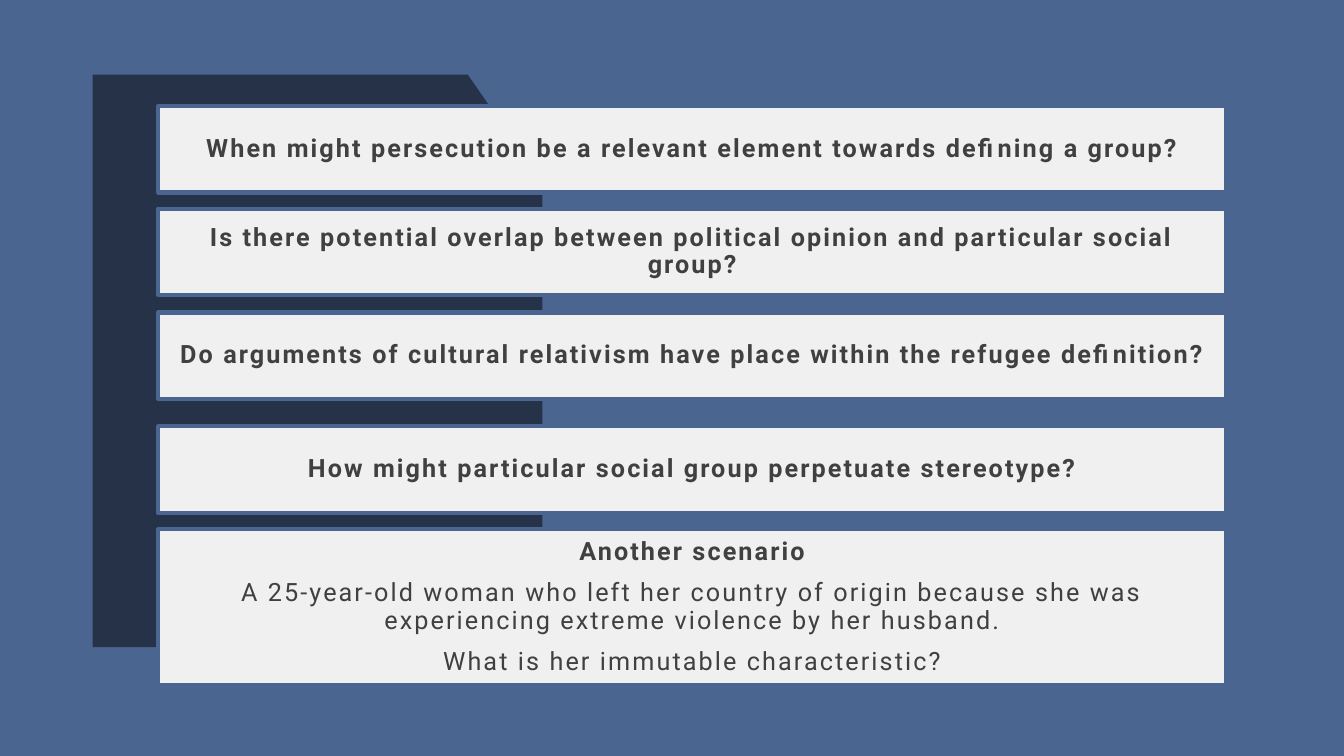
from pptx import Presentation
from pptx import util as u
from pptx.dml.color import RGBColor
from pptx.enum import shapes, text

BLUE, NAVY, PALE, GREY = "4A6590", "253248", "F1F0F0", "404040"

# Top, height and paragraphs of each card; the first paragraph is bold
CARDS = [
    (1.05, 0.86, ["When might persecution be a relevant element towards defining a group?"]),
    (2.07, 0.86, ["Is there potential overlap between political opinion and particular social group?"]),
    (3.10, 0.86, ["Do arguments of cultural relativism have place within the refugee definition?"]),
    (4.23, 0.86, ["How might particular social group perpetuate stereotype?"]),
    (5.25, 1.55, [
        "Another scenario",
        "A 25-year-old woman who left her country of origin because she was "
        "experiencing extreme violence by her husband.",
        "What is her immutable characteristic?",
    ]),
]


def color(hex_value):
    return RGBColor.from_string(hex_value)


def paint(shape, fill, line=None, width=3):
    shape.shadow.inherit = False
    shape.fill.solid()
    shape.fill.fore_color.rgb = color(fill)
    if line:
        shape.line.color.rgb = color(line)
        shape.line.width = u.Pt(width)
    else:
        shape.line.fill.background()


def write(paragraph, words, size=18, bold=False, ink=GREY, spacing=1.5, before=0):
    paragraph.alignment = text.PP_ALIGN.CENTER
    paragraph.line_spacing = 0.9
    paragraph.space_before = u.Pt(before)
    run = paragraph.add_run()
    run.text = words
    run.font.name = "Roboto"
    run.font.size = u.Pt(size)
    run.font.bold = bold
    run.font.color.rgb = color(ink)
    # Letter spacing, in hundredths of a point
    run._r.get_or_add_rPr().set("spc", str(int(spacing * 100)))


def add_backdrop(slide, left, top, width, height):
    """Dark panel with its top right corner cut off."""
    cut_x, cut_y = 0.74, 1.07
    right, bottom = left + width, top + height
    outline = slide.shapes.build_freeform(
        u.Inches(left), u.Inches(top), scale=1.0)
    corners = [(right - cut_x, top), (right, top + cut_y), (right, bottom), (left, bottom)]
    outline.add_line_segments([(u.Inches(x), u.Inches(y)) for x, y in corners], close=True)
    paint(outline.convert_to_shape(), NAVY)


def add_card(slide, left, top, width, height, paragraphs):
    """Pale box with a bold question or heading and any plain lines below."""
    card = slide.shapes.add_shape(
        shapes.MSO_SHAPE.RECTANGLE,
        u.Inches(left), u.Inches(top), u.Inches(width), u.Inches(height))
    paint(card, PALE, BLUE)
    frame = card.text_frame
    frame.word_wrap = True
    frame.vertical_anchor = text.MSO_ANCHOR.MIDDLE
    for index, words in enumerate(paragraphs):
        paragraph = frame.add_paragraph() if index else frame.paragraphs[0]
        write(paragraph, words, bold=index == 0, before=10 if index else 0)


def add_question_slide(deck):
    slide = deck.slides.add_slide(deck.slide_layouts[6])
    slide.background.fill.solid()
    slide.background.fill.fore_color.rgb = color(BLUE)
    add_backdrop(slide, 0.92, 0.74, 4.46, 5.68)
    for top, height, paragraphs in CARDS:
        add_card(slide, 1.57, top, 10.59, height, paragraphs)


def main():
    deck = Presentation()
    deck.slide_width, deck.slide_height = u.Inches(13.33), u.Inches(7.5)
    add_question_slide(deck)
    deck.save("out.pptx")


if __name__ == "__main__":
    main()
